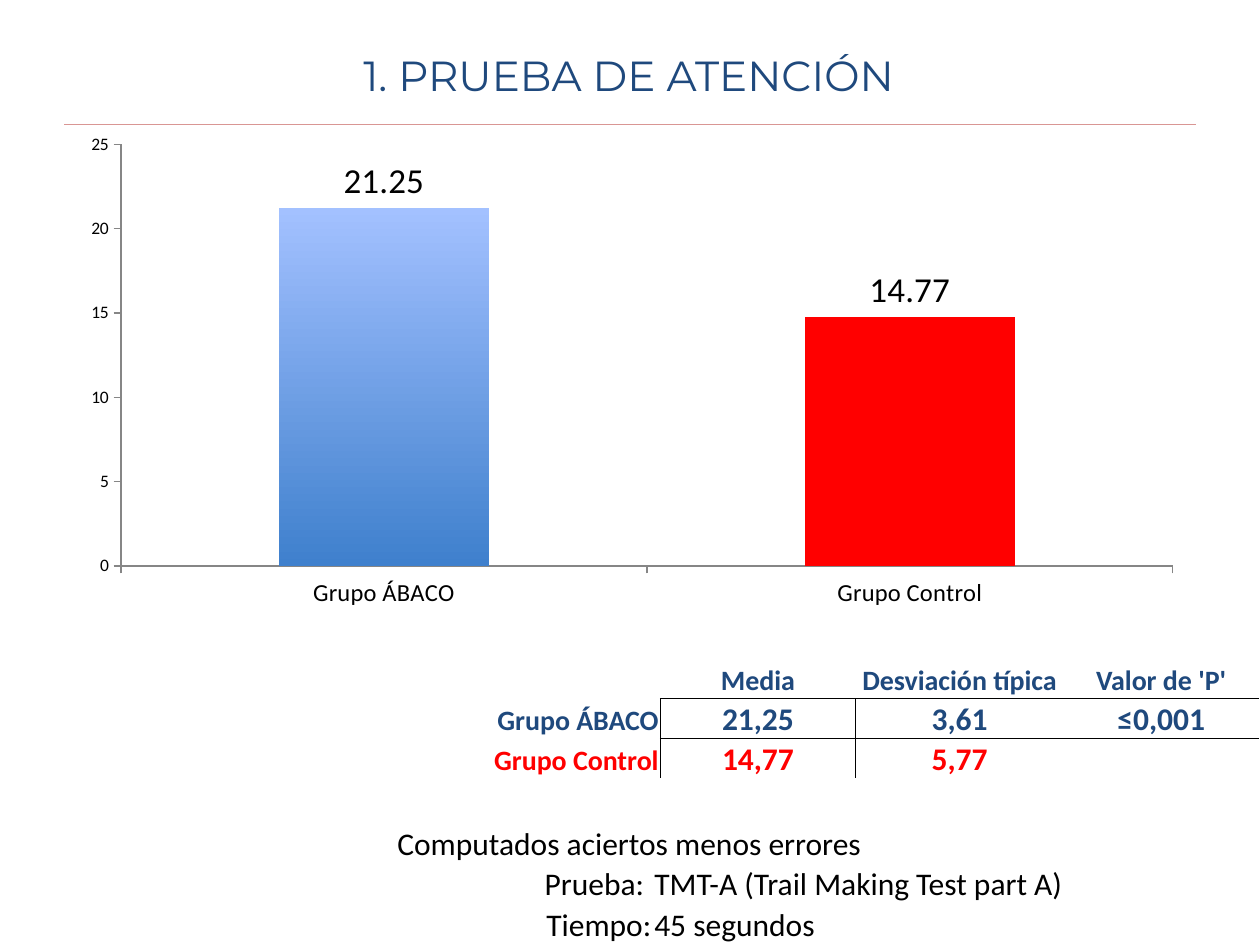
"""Build the attention-test slide with its column chart and two tables."""
import pptx
import pptx.chart.data
import pptx.dml.color
import pptx.enum.chart
import pptx.enum.shapes
import pptx.enum.text
import pptx.oxml
import pptx.oxml.ns
import pptx.util
from lxml import etree
from pptx.util import Cm, Pt

COLORS = {
    "navy": "1F497D", "red": "FF0000", "black": "000000", "rule": "D99694",
    "axis": "868686", "blue": "4F81BD", "bar_bottom": "3F80CD", "bar_top": "A3C1FF",
}
ALIGN = pptx.enum.text.PP_ALIGN
ANCHOR = pptx.enum.text.MSO_ANCHOR
NO_TABLE_STYLE = "{2D5ABB26-0587-4C30-8999-92F81FD0307C}"


def style_font(font, size, color, name="Calibri", bold=False):
    font.size = Pt(size)
    font.name = name
    font.bold = bold
    font.color.rgb = pptx.dml.color.RGBColor.from_string(COLORS[color])


def add_plain_table(page, left, top, widths, row_height, rows):
    frame = page.shapes.add_table(
        len(rows), len(widths), Cm(left), Cm(top), Cm(sum(widths)), Cm(row_height * len(rows)))
    table = frame.table
    table.first_row = table.horz_banding = False
    table._tbl.tblPr.find(pptx.oxml.ns.qn("a:tableStyleId")).text = NO_TABLE_STYLE
    for column, width in zip(table.columns, widths):
        column.width = Cm(width)
    for row, cells in zip(table.rows, rows):
        row.height = Cm(row_height)
        for cell, (text, align, size, color, bold, sides) in zip(row.cells, cells):
            cell.margin_left = cell.margin_right = cell.margin_top = Cm(0.03)
            cell.margin_bottom = 0
            cell.vertical_anchor = ANCHOR.BOTTOM
            para = cell.text_frame.paragraphs[0]
            para.alignment = align
            if text:
                para.text = text
            else:
                etree.SubElement(para._p, pptx.oxml.ns.qn("a:endParaRPr")).set("sz", str(size * 100))
            style_font(para.font, size, color, bold=bold)
            for side in sides:
                cell._tc.get_or_add_tcPr().append(pptx.oxml.parse_xml(
                    f'<a:ln{side} {pptx.oxml.ns.nsdecls("a")} w="6350"><a:solidFill>'
                    f'<a:srgbClr val="{COLORS["black"]}"/></a:solidFill></a:ln{side}>'))
            cell.fill.background()
    return table


deck = pptx.Presentation()
deck.slide_width, deck.slide_height = Cm(25.4), Cm(19.05)
page = deck.slides.add_slide(deck.slide_layouts[5])

title = page.shapes.title
title.left, title.top, title.width, title.height = Cm(1.24), Cm(0.74), Cm(22.86), Cm(1.55)
title.text_frame.text = "1. PRUEBA DE ATENCIÓN"
title.text_frame.vertical_anchor = ANCHOR.MIDDLE
heading = title.text_frame.paragraphs[0]
heading.alignment = ALIGN.CENTER
style_font(heading.font, 24, "navy", "Montserrat")

rule = page.shapes.add_connector(
    pptx.enum.shapes.MSO_CONNECTOR.STRAIGHT, Cm(1.3), Cm(2.51), Cm(24.1), Cm(2.51))
rule.line.width = Pt(0.75)
rule.line.color.rgb = pptx.dml.color.RGBColor.from_string(COLORS["rule"])
etree.SubElement(rule._element.spPr, pptx.oxml.ns.qn("a:effectLst"))

notes = [
    ("Computados aciertos menos errores", ""),
    ("Prueba: ", "TMT-A (Trail Making Test part A)"),
    ("Tiempo:", "45 segundos"),
]
note_rows = [
    [(label, ALIGN.RIGHT if value else ALIGN.LEFT, 18, "black", False, ""),
     (value, ALIGN.LEFT, 18, "black", False, "")]
    for label, value in notes
]
note_table = add_plain_table(page, 7.98, 16.61, [5.18, 12.24], 0.81, note_rows)
note_table.cell(0, 0).merge(note_table.cell(0, 1))

headers = ["Media", "Desviación típica", "Valor de 'P'"]
groups = [
    ("Grupo ÁBACO", "navy", ["21,25", "3,61", "≤0,001"], "T"),
    ("Grupo Control", "red", ["14,77", "5,77", ""], ""),
]
result_rows = [
    [("", ALIGN.LEFT, 16, "navy", True, "")]
    + [(text, ALIGN.CENTER, 16, "navy", True, "B") for text in headers]
]
for name, color, values, top_side in groups:
    result_rows.append(
        [(name, ALIGN.RIGHT, 16, color, True, "R")]
        + [(text, ALIGN.CENTER, 18, color, True, ("" if index else "L") + top_side)
           for index, text in enumerate(values)])
add_plain_table(page, 2.54, 13.36, [10.77, 3.94, 4.19, 3.94], 0.71, result_rows)

chart_data = pptx.chart.data.CategoryChartData()
chart_data.categories = [group[0] for group in groups]
chart_data.add_series("Series 1", [21.25, 14.77])
chart = page.shapes.add_chart(
    pptx.enum.chart.XL_CHART_TYPE.COLUMN_CLUSTERED,
    Cm(1.3), Cm(2.51), Cm(22.8), Cm(10), chart_data).chart
chart.has_title = chart.has_legend = False
style_font(chart.font, 10, "black")

for axis in (chart.category_axis, chart.value_axis):
    axis.has_major_gridlines = False
    axis.major_tick_mark = pptx.enum.chart.XL_TICK_MARK.OUTSIDE
    axis.minor_tick_mark = pptx.enum.chart.XL_TICK_MARK.NONE
    axis.format.line.width = Pt(0.75)
    axis.format.line.color.rgb = pptx.dml.color.RGBColor.from_string(COLORS["axis"])
style_font(chart.category_axis.tick_labels.font, 14, "black")
chart.value_axis.minimum_scale = 0
chart.value_axis.maximum_scale = 25
chart.value_axis.major_unit = 5

plot = chart.plots[0]
plot.gap_width = 150
plot.vary_by_categories = False
series = plot.series[0]
series.format.fill.solid()
series.format.fill.fore_color.rgb = pptx.dml.color.RGBColor.from_string(COLORS["blue"])
first_fill = series.points[0].format.fill
first_fill.gradient()
first_fill.gradient_angle = 90
for stop, color in zip(first_fill.gradient_stops, ["bar_bottom", "bar_top"]):
    stop.color.rgb = pptx.dml.color.RGBColor.from_string(COLORS[color])
control_fill = series.points[1].format.fill
control_fill.solid()
control_fill.fore_color.rgb = pptx.dml.color.RGBColor.from_string(COLORS["red"])

labels = series.data_labels
labels.show_value = True
labels.position = pptx.enum.chart.XL_LABEL_POSITION.OUTSIDE_END
style_font(labels.font, 20, "black")

plot_area = chart._chartSpace.chart.plotArea
for old_layout in plot_area.findall(pptx.oxml.ns.qn("c:layout")):
    plot_area.remove(old_layout)
plot_area.insert(0, pptx.oxml.parse_xml(
    f'<c:layout {pptx.oxml.ns.nsdecls("c")}><c:manualLayout><c:layoutTarget val="inner"/>'
    '<c:xMode val="edge"/><c:yMode val="edge"/><c:x val="0.05"/><c:y val="0.04"/>'
    '<c:w val="0.93"/><c:h val="0.85"/></c:manualLayout></c:layout>'))

deck.save("out.pptx")
